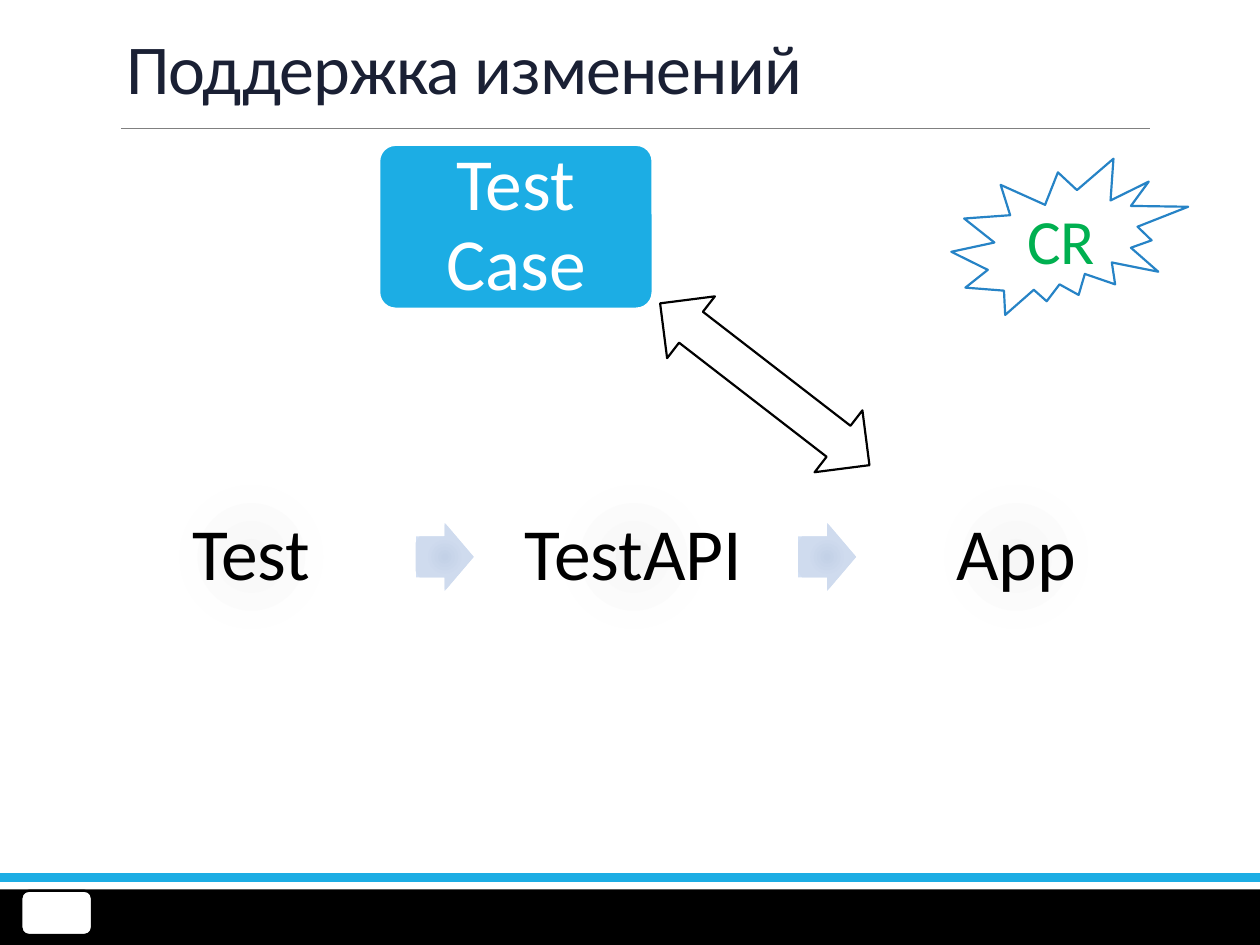
from pptx import Presentation
from pptx.dml.color import RGBColor
from pptx.enum.shapes import MSO_CONNECTOR, MSO_SHAPE
from pptx.enum.text import MSO_ANCHOR, MSO_AUTO_SIZE, PP_ALIGN
from pptx.oxml import parse_xml
from pptx.oxml.ns import nsdecls, qn
from pptx.util import Inches, Pt
from lxml.etree import SubElement

# Content
TITLE = "Поддержка изменений"
STEPS = ["Test", "TestAPI", "App"]
CASE = "Test Case"
REQUEST = "CR"

FONT = "Calibri"
COLORS = {
    "black": "000000", "white": "FFFFFF", "accent": "1CADE4", "title": "1A2034",
    "rule": "808080", "seal": "2683C6", "request": "00B050",
}
STEP_GLOW = [(0, "F6F6F6"), (45, "FEFEFE"), (100, "FFFFFF")]
ARROW_GLOW = [(0, "C3D1E7"), (45, "CFDBEE"), (100, "D2DFF3")]

# Grid of the process row
WIDTH, HEIGHT = 10, 7.5
BOX_W, BOX_H = 2.17, 1.3
ROW_LEFT, ROW_TOP, PITCH = 0.91, 3.77, 3.035
ARROW_W, ARROW_H, ARROW_GAP = 0.46, 0.54, 0.22
INSET = 0.17  # the rounded corners add their own margin


def color(name):
    return RGBColor.from_string(COLORS[name])


def write(box, text, *, size, ink, align=PP_ALIGN.CENTER, anchor=MSO_ANCHOR.MIDDLE,
          inset=None, line_spacing=1.0, tracking=None):
    frame = box.text_frame
    frame.word_wrap = True
    frame.auto_size = MSO_AUTO_SIZE.NONE
    frame.vertical_anchor = anchor
    if inset is not None:
        frame.margin_left = frame.margin_right = Inches(inset)
        frame.margin_top = frame.margin_bottom = Inches(inset)
    para = frame.paragraphs[0]
    para.alignment = align
    para.line_spacing = line_spacing
    span = para.add_run()
    span.text = text
    span.font.name = FONT
    span.font.size = Pt(size)
    span.font.color.rgb = color(ink)
    if tracking is not None:
        span._r.get_or_add_rPr().set("spc", str(round(tracking * 100)))


def glow(shape, stops):
    """Fill a shape with a radial gradient."""
    shape.fill.gradient()
    marks = "".join(f'<a:gs pos="{pos * 1000}"><a:srgbClr val="{value}"/></a:gs>'
                    for pos, value in stops)
    radial = parse_xml(
        f'<a:gradFill {nsdecls("a")} rotWithShape="1"><a:gsLst>{marks}</a:gsLst>'
        '<a:path path="circle"><a:fillToRect l="100000" t="100000" r="100000" b="100000"/>'
        '</a:path></a:gradFill>')
    properties = shape._element.spPr
    properties.replace(properties.find(radial.tag), radial)


def add_shape(page, kind, left, top, width, height, *, fill=None, stops=None,
              line=None, adjust=(), rotation=0):
    shape = page.shapes.add_shape(kind, Inches(left), Inches(top), Inches(width), Inches(height))
    shape.shadow.inherit = False
    shape.rotation = rotation
    for index, value in enumerate(adjust):
        shape.adjustments[index] = value
    if stops:
        glow(shape, stops)
    else:
        shape.fill.solid()
        shape.fill.fore_color.rgb = color(fill)
    if line:
        shape.line.color.rgb = color(line)
        shape.line.width = Pt(1.25)
    else:
        shape.line.fill.background()
    return shape


def add_frame(page):
    # Footer bands and number badge
    add_shape(page, MSO_SHAPE.RECTANGLE, 0, 7.06, WIDTH, HEIGHT - 7.06, fill="black")
    add_shape(page, MSO_SHAPE.RECTANGLE, 0, 6.93, WIDTH, 0.07, fill="accent")
    add_shape(page, MSO_SHAPE.ROUNDED_RECTANGLE, 0.17, 7.07, 0.56, 0.35,
              fill="white", line="black")
    # Rule under the title
    rule = page.shapes.add_connector(MSO_CONNECTOR.STRAIGHT, Inches(0.96), Inches(1.02),
                                     Inches(9.13), Inches(1.02))
    rule.line.color.rgb = color("rule")
    rule.line.width = Pt(0.5)
    SubElement(rule._element.spPr, qn("a:effectLst"))


def add_title(page):
    title = page.shapes.title
    title.left, title.top = Inches(0.9), Inches(0.31)
    title.width, title.height = Inches(8.25), Inches(0.6)
    write(title, TITLE, size=40, ink="title", align=PP_ALIGN.LEFT,
          anchor=MSO_ANCHOR.BOTTOM, line_spacing=0.85, tracking=-0.5)


def add_process(page):
    for index, step in enumerate(STEPS):
        left = ROW_LEFT + index * PITCH
        box = add_shape(page, MSO_SHAPE.ROUNDED_RECTANGLE, left, ROW_TOP, BOX_W, BOX_H,
                        stops=STEP_GLOW, adjust=[0.1])
        write(box, step, size=42, ink="black", inset=INSET, line_spacing=0.9)
        if index < len(STEPS) - 1:
            add_shape(page, MSO_SHAPE.RIGHT_ARROW, left + BOX_W + ARROW_GAP,
                      ROW_TOP + (BOX_H - ARROW_H) / 2, ARROW_W, ARROW_H,
                      stops=ARROW_GLOW, adjust=[0.6, 0.5])


def add_change(page):
    # Test case, its link to the application, and the change request
    case = add_shape(page, MSO_SHAPE.ROUNDED_RECTANGLE, 3.01, 1.15, BOX_W, BOX_H,
                     fill="accent", line="white", adjust=[0.1])
    write(case, CASE, size=42, ink="white", inset=INSET, line_spacing=0.9)
    add_shape(page, MSO_SHAPE.LEFT_RIGHT_ARROW, 5.02, 2.74, 2.1, 0.62,
              fill="white", line="black", rotation=37.7)
    seal = add_shape(page, MSO_SHAPE.EXPLOSION2, 7.55, 1.26, 1.88, 1.24,
                     fill="white", line="seal")
    write(seal, REQUEST, size=36, ink="request")


def main():
    deck = Presentation()
    deck.slide_width, deck.slide_height = Inches(WIDTH), Inches(HEIGHT)
    page = deck.slides.add_slide(deck.slide_layouts[5])
    add_frame(page)
    add_title(page)
    add_process(page)
    add_change(page)
    deck.save("out.pptx")


if __name__ == "__main__":
    main()
